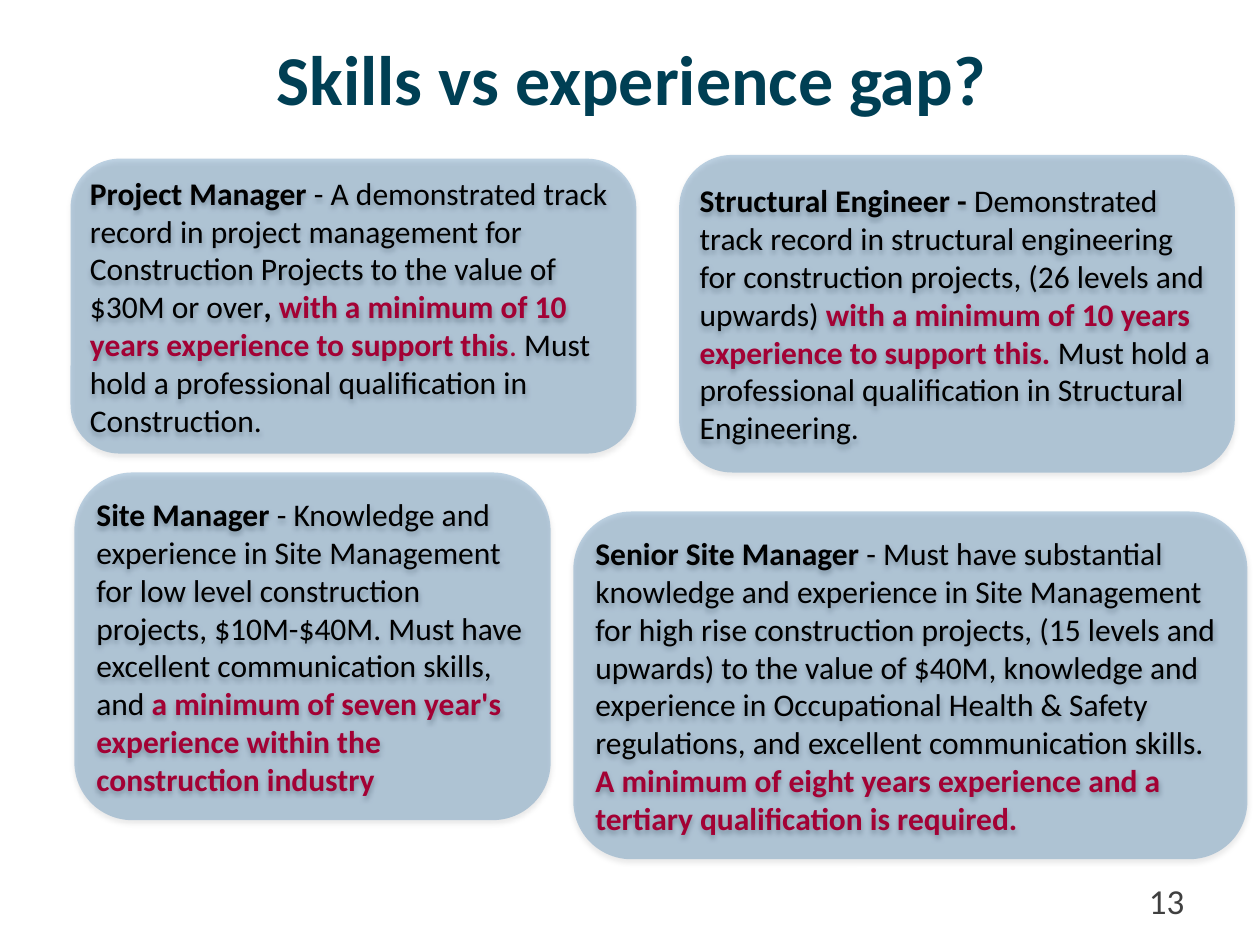
from dataclasses import dataclass

from lxml import etree
from pptx import Presentation, util as u
from pptx.dml.color import RGBColor
from pptx.enum import shapes, text
from pptx.oxml import ns

COLUMNS, ROWS = 100, 75


@dataclass(frozen=True)
class Theme:
    font: str = "Calibri"
    title: str = "003F54"
    card: str = "005295"
    body: str = "000000"
    key: str = "A30134"
    number: str = "404040"
    shadow: str = "000000"
    title_size: int = 40
    body_size: int = 18
    number_size: int = 20
    card_opacity: int = 25
    shadow_opacity: int = 35


RUN_STYLES = {
    "lead": ("body", True),
    "plain": ("body", False),
    "key": ("key", True),
    "key_plain": ("key", False),
}

CARDS = [
    ((5.6, 12.6, 44.9, 23.4), [
        ("Project Manager", "lead"),
        (" - A demonstrated track record in project management for Construction "
         "Projects to the value of $30M or over", "plain"),
        (", ", "lead"),
        ("with a minimum of 10 years experience to support this", "key"),
        (". ", "key_plain"),
        ("Must hold a professional qualification in Construction.", "plain"),
    ]),
    ((45.5, 40.6, 53.5, 27.6), [
        ("Senior Site Manager ", "lead"),
        ("- Must have substantial knowledge and experience in Site Management for "
         "high rise construction projects, (15 levels and upwards) to the value of "
         "$40M, knowledge and experience in Occupational Health & Safety "
         "regulations, and excellent communication skills. ", "plain"),
        ("A minimum of eight years experience and a tertiary qualification is "
         "required.", "key"),
    ]),
    ((5.9, 37.5, 37.8, 27.6), [
        ("Site Manager ", "lead"),
        ("- Knowledge and experience in Site Management for low level construction "
         "projects, $10M-$40M. Must have excellent communication skills, and ",
         "plain"),
        ("a minimum of seven year's experience within the construction industry",
         "key"),
    ]),
    ((53.9, 12.3, 44.1, 25.2), [
        ("Structural Engineer - ", "lead"),
        ("Demonstrated track record in structural engineering for construction "
         "projects, (26 levels and upwards) ", "plain"),
        ("with a minimum of 10 years experience to support this.", "key"),
        (" Must hold a professional qualification in Structural Engineering.",
         "plain"),
    ]),
]


class SlideBuilder:
    def __init__(self, presentation, theme):
        self.theme = theme
        self.column = presentation.slide_width / COLUMNS
        self.row = presentation.slide_height / ROWS
        self.slide = presentation.slides.add_slide(presentation.slide_layouts[5])

    def area(self, left, top, width, height):
        return (round(left * self.column), round(top * self.row),
                round(width * self.column), round(height * self.row))

    def format_font(self, font, size, color=None, bold=None):
        font.name = self.theme.font
        font.size = u.Pt(size)
        font.bold = bold
        if color:
            font.color.rgb = RGBColor.from_string(color)

    def set_frame(self, shape, anchor, inset):
        frame = shape.text_frame
        frame.word_wrap = True
        frame.auto_size = text.MSO_AUTO_SIZE.NONE
        frame.vertical_anchor = anchor
        frame.margin_left = frame.margin_right = u.Inches(inset)
        frame.margin_top = frame.margin_bottom = u.Inches(inset)
        return frame

    def title(self, area, wording):
        shape = self.slide.shapes.title
        shape.left, shape.top, shape.width, shape.height = self.area(*area)
        frame = self.set_frame(shape, text.MSO_ANCHOR.TOP, 0.07)
        frame.text = wording
        paragraph = frame.paragraphs[0]
        paragraph.alignment = text.PP_ALIGN.CENTER
        self.format_font(paragraph.font, self.theme.title_size,
                         self.theme.title, True)

    def add_shadow(self, shape):
        shape.shadow.inherit = False
        effects = shape.element.spPr.find(ns.qn("a:effectLst"))
        shadow = etree.SubElement(
            effects, ns.qn("a:outerShdw"), blurRad=str(u.Pt(3.1)),
            dist=str(u.Pt(1.8)), dir=str(90 * 60000), rotWithShape="0")
        color = etree.SubElement(shadow, ns.qn("a:srgbClr"), val=self.theme.shadow)
        self.set_opacity(color, self.theme.shadow_opacity)

    def set_opacity(self, color, percent):
        etree.SubElement(color, ns.qn("a:alpha"), val=str(percent * 1000))

    def card(self, area, runs):
        shape = self.slide.shapes.add_shape(
            shapes.MSO_SHAPE.ROUNDED_RECTANGLE, *self.area(*area))
        shape.fill.solid()
        shape.fill.fore_color.rgb = RGBColor.from_string(self.theme.card)
        color = shape.element.spPr.find(ns.qn("a:solidFill"))[0]
        self.set_opacity(color, self.theme.card_opacity)
        shape.line.fill.background()
        self.add_shadow(shape)
        frame = self.set_frame(shape, text.MSO_ANCHOR.MIDDLE, 0.04)
        paragraph = frame.paragraphs[0]
        paragraph.alignment = text.PP_ALIGN.LEFT
        self.format_font(paragraph.font, self.theme.body_size)
        for wording, style in runs:
            color_name, bold = RUN_STYLES[style]
            run = paragraph.add_run()
            run.text = wording
            run.font.bold = bold
            run.font.color.rgb = RGBColor.from_string(
                getattr(self.theme, color_name))

    def page_number(self, area, wording):
        shape = self.slide.shapes.add_textbox(*self.area(*area))
        frame = self.set_frame(shape, text.MSO_ANCHOR.MIDDLE, 0.1)
        frame.margin_top = frame.margin_bottom = u.Inches(0.05)
        frame.text = wording
        paragraph = frame.paragraphs[0]
        paragraph.alignment = text.PP_ALIGN.RIGHT
        self.format_font(paragraph.font, self.theme.number_size, self.theme.number)


def main():
    presentation = Presentation()
    presentation.slide_width = u.Inches(10)
    presentation.slide_height = u.Inches(7.5)
    builder = SlideBuilder(presentation, Theme())
    builder.title((5.1, 2.1, 90, 10.1), "Skills vs experience gap?")
    for area, runs in CARDS:
        builder.card(area, runs)
    builder.page_number((89.4, 69.5, 5.6, 4), "13")
    presentation.save("out.pptx")


if __name__ == "__main__":
    main()
